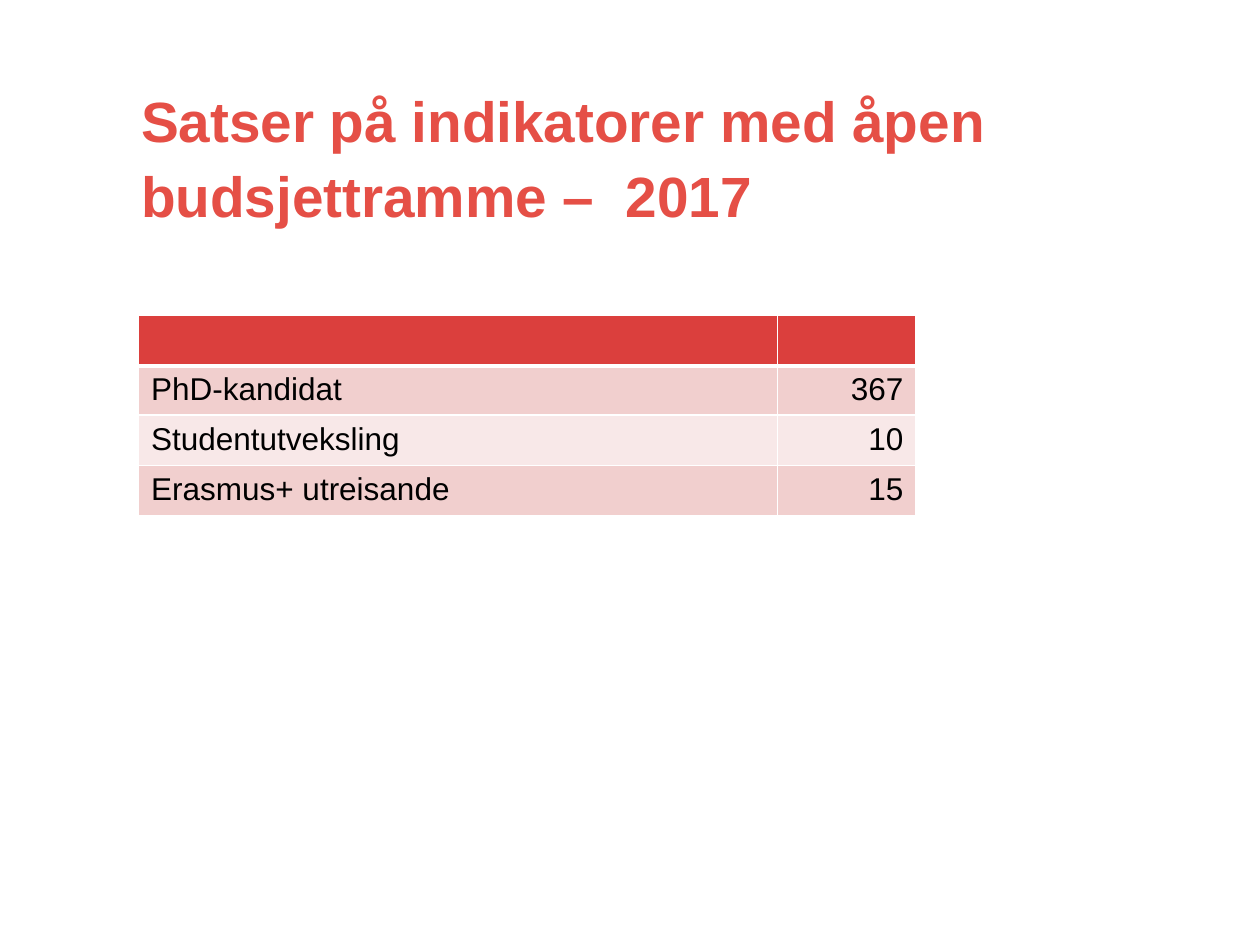
from dataclasses import dataclass

from lxml.etree import SubElement
from pptx import Presentation
from pptx.dml.color import RGBColor
from pptx.enum.text import MSO_ANCHOR, MSO_AUTO_SIZE, PP_ALIGN
from pptx.oxml.ns import qn
from pptx.util import Inches, Pt


@dataclass(frozen=True)
class Theme:
    font: str = "Arial"
    title: str = "E54F46"
    text: str = "000000"
    head: str = "DB3F3D"
    bands: tuple = ("F1CFCE", "F8E8E8")
    rule: str = "FFFFFF"
    title_size: float = 32.4
    title_line: float = 43.2
    cell_size: float = 18


class Page:
    def __init__(self, deck, theme):
        self.theme = theme
        self.slide = deck.slides.add_slide(deck.slide_layouts[5])

    def add_text(self, para, text, size, color, bold=False):
        run = para.add_run()
        run.text = text
        font = run.font
        font.name, font.size, font.bold = self.theme.font, Pt(size), bold
        font.color.rgb = RGBColor.from_string(color)

    def title(self, text, left, top, width, height):
        theme, shape = self.theme, self.slide.shapes.title
        shape.left, shape.top = Inches(left), Inches(top)
        shape.width, shape.height = Inches(width), Inches(height)
        frame = shape.text_frame
        frame.auto_size = MSO_AUTO_SIZE.NONE
        frame.word_wrap = True
        frame.vertical_anchor = MSO_ANCHOR.BOTTOM
        frame.margin_left = frame.margin_right = 0
        frame.margin_top = frame.margin_bottom = 0
        para = frame.paragraphs[0]
        para.alignment = PP_ALIGN.LEFT
        para.line_spacing = Pt(theme.title_line)
        self.add_text(para, text, theme.title_size, theme.title, True)

    def border(self, cell, sides):
        # Border lines come before the fill in the cell properties
        props = cell._tc.get_or_add_tcPr()
        for side, width in sides.items():
            line = SubElement(props, qn(f"a:ln{side}"), w=str(Pt(width)))
            fill = SubElement(line, qn("a:solidFill"))
            SubElement(fill, qn("a:srgbClr"), val=self.theme.rule)

    def table(self, rows, left, top, widths, heights):
        theme = self.theme
        table = self.slide.shapes.add_table(
            len(rows), len(widths), Inches(left), Inches(top),
            Inches(sum(widths)), Inches(sum(heights))).table
        table.first_row = table.horz_banding = False
        for col, width in zip(table.columns, widths):
            col.width = Inches(width)
        for row, height in zip(table.rows, heights):
            row.height = Inches(height)
        for r, row in enumerate(rows):
            color = theme.bands[(r - 1) % 2] if r else theme.head
            for c, text in enumerate(row):
                cell = table.cell(r, c)
                self.border(cell, {"L": 1, "R": 1, "T": 3 if r == 1 else 1,
                                   "B": 1 if r else 3})
                cell.fill.solid()
                cell.fill.fore_color.rgb = RGBColor.from_string(color)
                para = cell.text_frame.paragraphs[0]
                para.alignment = PP_ALIGN.RIGHT if c else PP_ALIGN.LEFT
                if text:
                    self.add_text(para, text, theme.cell_size, theme.text)


def main():
    deck = Presentation()
    deck.slide_width, deck.slide_height = Inches(10), Inches(7.5)
    page = Page(deck, Theme())

    # Heading
    page.title("Satser på indikatorer med åpen budsjettramme –  2017",
               1.12, 1.11, 8.06, 0.71)

    # Rates
    rows = [("", ""), ("PhD-kandidat", "367"),
            ("Studentutveksling", "10"), ("Erasmus+ utreisande", "15")]
    page.table(rows, 1.1, 2.5, (5.07, 1.1), (0.39, 0.39, 0.4, 0.4))

    deck.save("out.pptx")


if __name__ == "__main__":
    main()
